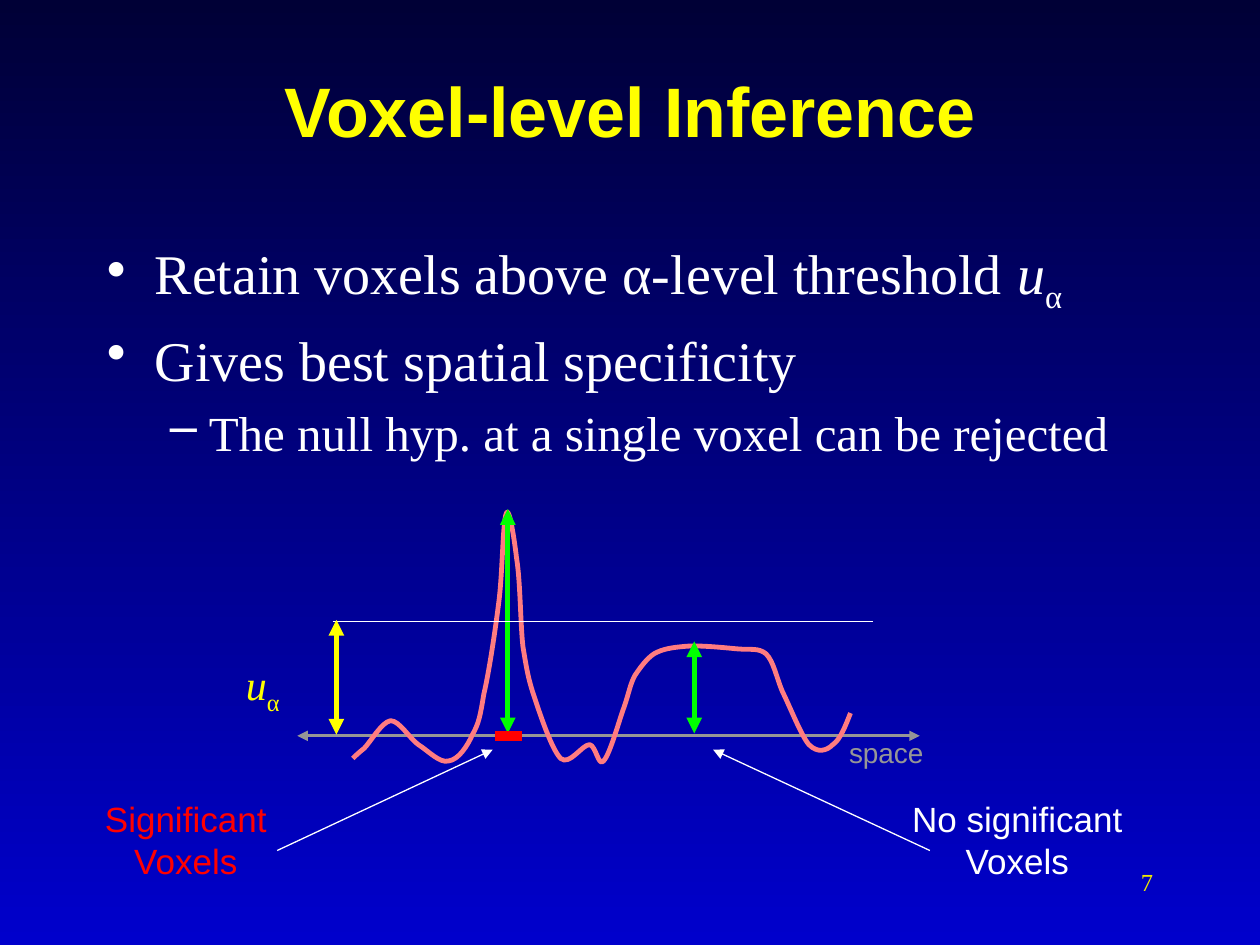
from dataclasses import dataclass

from lxml.etree import SubElement
from pptx import Presentation
from pptx.dml.color import RGBColor
from pptx.enum.shapes import MSO_CONNECTOR
from pptx.enum.text import MSO_ANCHOR, PP_ALIGN
from pptx.oxml.ns import qn
from pptx.util import Inches, Pt

WHITE, YELLOW, RED, GREEN, GREY, PINK = (
    "FFFFFF", "FFFF00", "FF0000", "00FF00", "969696", "FF7C80")
SERIF, SANS = "Times New Roman", "Arial"
AXIS_Y, THRESHOLD_Y = 5.84, 4.93


@dataclass
class Run:
    text: str
    italic: bool = False
    subscript: bool = False


@dataclass
class Paragraph:
    runs: list[Run]
    size: int
    space_before: float = 0
    bullet: str = ""
    margin: float = 0
    hanging: float = 0
    level: int = 0


@dataclass
class TextBlock:
    box: tuple[float, float, float, float]
    paragraphs: list[Paragraph]
    font: str
    color: str
    align: PP_ALIGN = PP_ALIGN.LEFT
    anchor: MSO_ANCHOR = MSO_ANCHOR.TOP
    bold: bool = False


@dataclass
class Line:
    start: tuple[float, float]
    end: tuple[float, float]
    color: str
    width: float
    arrows: tuple[str, ...] = ()


BOTH_ENDS = ("headEnd", "tailEnd")
END_ONLY = ("tailEnd",)
THRESHOLD_SYMBOL = [Run("u", italic=True), Run("α", subscript=True)]

CURVE_START = (2.8, 6.02)
CURVE_SEGMENTS = [
    (2.82, 6, 2.84, 5.98, 2.89, 5.94),
    (2.94, 5.89, 3.03, 5.73, 3.1, 5.72),
    (3.17, 5.72, 3.25, 5.86, 3.32, 5.91),
    (3.4, 5.96, 3.49, 6.06, 3.56, 6.04),
    (3.64, 6.03, 3.71, 5.92, 3.75, 5.83),
    (3.8, 5.74, 3.81, 5.69, 3.84, 5.51),
    (3.88, 5.34, 3.93, 5.01, 3.96, 4.77),
    (3.99, 4.53, 3.99, 4.13, 4.02, 4.07),
    (4.04, 4.02, 4.08, 4.26, 4.1, 4.43),
    (4.13, 4.61, 4.13, 4.95, 4.15, 5.13),
    (4.18, 5.31, 4.19, 5.38, 4.24, 5.53),
    (4.29, 5.68, 4.38, 5.95, 4.45, 6.02),
    (4.52, 6.08, 4.62, 5.91, 4.68, 5.91),
    (4.73, 5.92, 4.75, 6.09, 4.79, 6.04),
    (4.84, 5.99, 4.91, 5.73, 4.95, 5.62),
    (4.99, 5.51, 5, 5.43, 5.04, 5.36),
    (5.08, 5.3, 5.13, 5.23, 5.19, 5.19),
    (5.26, 5.15, 5.33, 5.14, 5.44, 5.13),
    (5.55, 5.12, 5.74, 5.14, 5.85, 5.15),
    (5.96, 5.16, 6.02, 5.14, 6.08, 5.19),
    (6.14, 5.25, 6.16, 5.37, 6.21, 5.49),
    (6.27, 5.61, 6.36, 5.84, 6.42, 5.91),
    (6.49, 5.98, 6.56, 5.96, 6.61, 5.91),
    (6.67, 5.87, 6.71, 5.76, 6.75, 5.66),
]


def rgb(color: str) -> RGBColor:
    return RGBColor.from_string(color)


def apply_format(target, values: dict) -> None:
    for name, value in values.items():
        setattr(target, name, value)


def label(text: str, size: int) -> list[Paragraph]:
    return [Paragraph([Run(text)], size)]


def bullet_item(runs: list[Run], size: int, bullet: str, margin: float,
                hanging: float, level: int = 0) -> Paragraph:
    return Paragraph(runs, size, size * 0.2, bullet, margin, hanging, level)


def draw_text(slide, block: TextBlock) -> None:
    shape = slide.shapes.add_textbox(*map(Inches, block.box))
    frame = shape.text_frame
    apply_format(frame, {"word_wrap": True, "vertical_anchor": block.anchor})
    for index, item in enumerate(block.paragraphs):
        paragraph = frame.add_paragraph() if index else frame.paragraphs[0]
        apply_format(paragraph, {"alignment": block.align, "level": item.level,
                                 "space_before": Pt(item.space_before)})
        if item.bullet:
            properties = paragraph._p.get_or_add_pPr()
            properties.set("marL", str(Inches(item.margin)))
            properties.set("indent", str(-Inches(item.hanging)))
            SubElement(properties, qn("a:buChar"), char=item.bullet)
        for part in item.runs:
            run = paragraph.add_run()
            run.text = part.text
            apply_format(run.font, {"name": block.font, "size": Pt(item.size),
                                    "bold": block.bold, "italic": part.italic})
            run.font.color.rgb = rgb(block.color)
            if part.subscript:
                run._r.get_or_add_rPr().set("baseline", "-25000")


def draw_line(slide, line: Line) -> None:
    connector = slide.shapes.add_connector(
        MSO_CONNECTOR.STRAIGHT, *map(Inches, line.start + line.end))
    connector.line.width = Pt(line.width)
    connector.line.color.rgb = rgb(line.color)
    outline = connector.line._get_or_add_ln()
    for arrow in line.arrows:
        SubElement(outline, qn(f"a:{arrow}"), type="triangle")
    SubElement(connector._element.spPr, qn("a:effectLst"))


def draw_curve(slide) -> None:
    points = [(Inches(segment[i]), Inches(segment[i + 1]))
              for segment in CURVE_SEGMENTS for i in (0, 2, 4)]
    builder = slide.shapes.build_freeform(*map(Inches, CURVE_START))
    builder.add_line_segments(points, close=False)
    shape = builder.convert_to_shape()
    shape.shadow.inherit = False
    shape.fill.background()
    shape.line.color.rgb = rgb(PINK)
    shape.line.width = Pt(2.75)
    steps = list(shape._element.iter(qn("a:lnTo")))
    outline = steps[0].getparent()
    for first in range(0, len(steps), 3):
        bezier = SubElement(outline, qn("a:cubicBezTo"))
        for step in steps[first:first + 3]:
            bezier.append(step[0])
            outline.remove(step)


def main() -> None:
    presentation = Presentation()
    apply_format(presentation, {"slide_width": Inches(10), "slide_height": Inches(7.5)})
    slide = presentation.slides.add_slide(presentation.slide_layouts[6])
    background = slide.background.fill
    background.gradient()
    background.gradient_angle = 270
    for stop, color, position in zip(background.gradient_stops, ("000036", "0000CC"), (0, 1)):
        stop.color.rgb = rgb(color)
        stop.position = position

    center = PP_ALIGN.CENTER
    bullets = [
        bullet_item([Run("Retain voxels above α-level threshold "), *THRESHOLD_SYMBOL],
                    32, "•", 0.38, 0.38),
        bullet_item([Run("Gives best spatial specificity")], 32, "•", 0.38, 0.38),
        bullet_item([Run("The null hyp. at a single voxel can be rejected")],
                    28, "–", 0.81, 0.31, 1),
    ]
    items = [
        TextBlock((7.17, 6.83, 2.08, 0.5), label("7", 14), SERIF, "F0EA00", PP_ALIGN.RIGHT),
        TextBlock((0.75, 0.24, 8.5, 1.25), label("Voxel-level Inference", 40),
                  SANS, YELLOW, center, MSO_ANCHOR.MIDDLE, True),
        TextBlock((0.75, 1.84, 8.5, 5.49), bullets, SERIF, WHITE),
        TextBlock((0.36, 6.28, 2.23, 0.77), label("Significant Voxels", 20), SANS, RED, center),
        Line((2.2, 6.75), (3.91, 5.95), WHITE, 0.75, END_ONLY),
        Line((2.36, AXIS_Y), (7.3, AXIS_Y), GREY, 1.75, BOTH_ENDS),
        None,
        TextBlock((6.64, 5.79, 1.36, 0.37), label("space", 16), SANS, GREY),
        Line((4.03, 5.82), (4.03, 4.04), GREEN, 3, BOTH_ENDS),
        Line((5.51, 5.82), (5.51, 5.09), GREEN, 3, BOTH_ENDS),
        Line((2.64, THRESHOLD_Y), (6.93, THRESHOLD_Y), WHITE, 0.75),
        TextBlock((1.67, 5.18, 0.83, 0.5), [Paragraph(THRESHOLD_SYMBOL, 24)],
                  SERIF, YELLOW, center),
        Line((3.93, AXIS_Y), (4.14, AXIS_Y), RED, 6),
        TextBlock((6.96, 6.28, 2.23, 0.77), label("No significant Voxels", 20),
                  SANS, WHITE, center),
        Line((7.38, 6.75), (5.66, 5.95), WHITE, 0.75, END_ONLY),
        Line((2.67, 5.83), (2.67, 4.92), YELLOW, 3, BOTH_ENDS),
    ]
    for item in items:
        if isinstance(item, TextBlock):
            draw_text(slide, item)
        elif isinstance(item, Line):
            draw_line(slide, item)
        else:
            draw_curve(slide)
    presentation.save("out.pptx")


if __name__ == "__main__":
    main()
